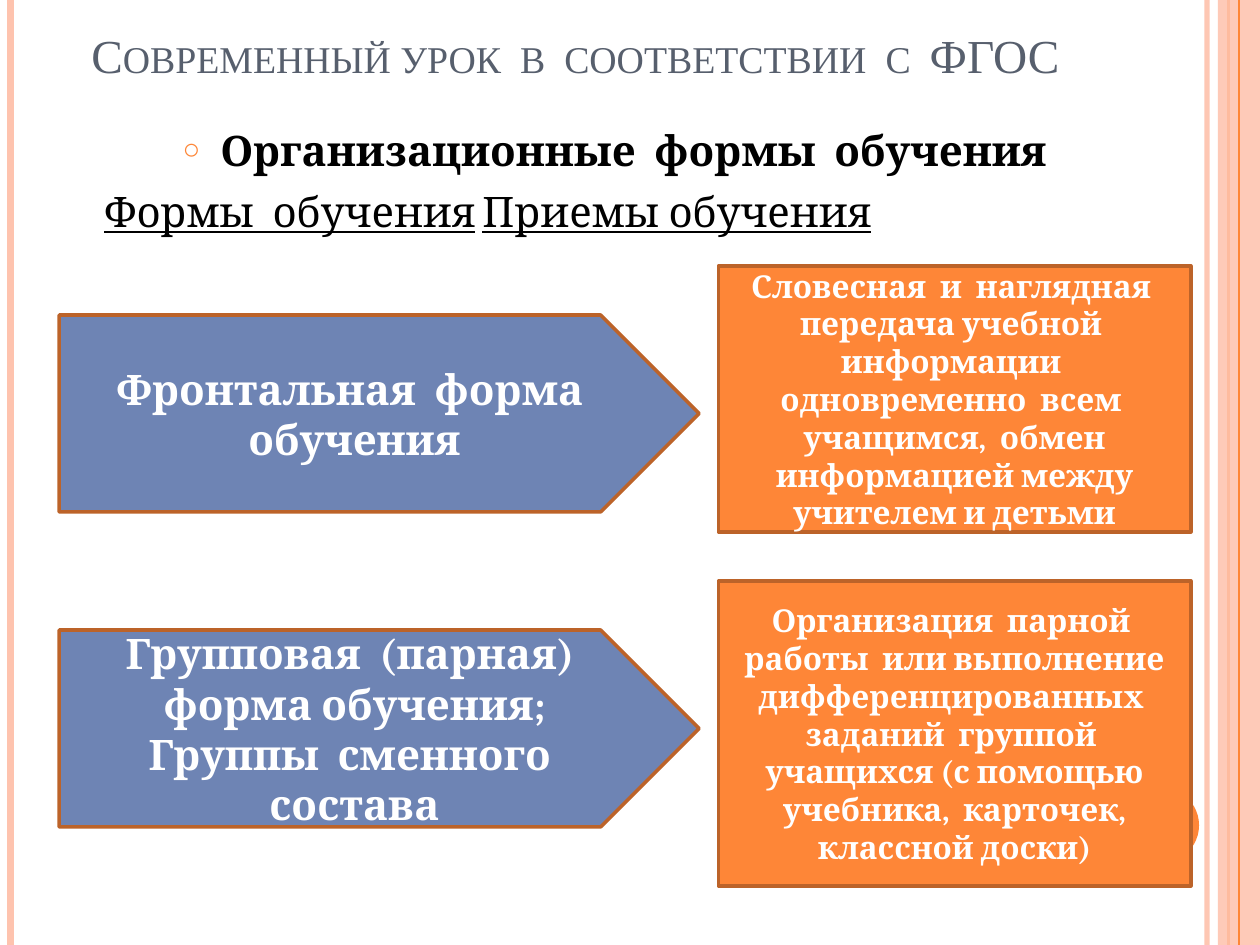
from lxml.etree import SubElement
from pptx import Presentation
from pptx.dml.color import RGBColor
from pptx.enum.shapes import MSO_CONNECTOR, MSO_SHAPE
from pptx.enum.text import MSO_ANCHOR, MSO_AUTO_SIZE, PP_ALIGN
from pptx.oxml.ns import qn
from pptx.util import Pt

WIDE, HIGH = 720, 540
ORANGE, PEACH, BLUE, RUST = "FE8637", "FEC3AE", "6E84B4", "BC6329"
HEAD = {"name": "Times New Roman", "size": Pt(27), "bold": False}
LEAD = {"name": "Cambria", "size": Pt(24), "bold": True}
PLAIN = {**LEAD, "bold": False}
UNDER = {**PLAIN, "underline": True}
SMALL = {**LEAD, "size": Pt(18)}


def hue(color, code):
    """Set a colour format from a hex string."""
    color.rgb = RGBColor.from_string(code)


def style(font, code, form):
    """Apply a dict of format values and a colour to a font."""
    for key, val in form.items():
        setattr(font, key, val)
    hue(font.color, code)


def add(parent, tag, **attrs):
    """Append a DrawingML element with attributes."""
    return SubElement(parent, qn(tag), **attrs)


def fade(part, share):
    """Make the solid fill below an element partly transparent."""
    tint = next(part.iter(qn("a:srgbClr")))
    add(tint, "a:alpha", val=str(share * 1000))


def place(shape, box):
    """Move a shape to a box in points."""
    for key, val in zip(("left", "top", "width", "height"), box):
        setattr(shape, key, Pt(val))


def write(para, text, code, form):
    """Add one formatted run to a paragraph."""
    run = para.add_run()
    run.text = text
    style(run.font, code, form)
    return run


def rule(slide, x, code, width, share=100):
    """Draw a full-height vertical line."""
    line = slide.shapes.add_connector(
        MSO_CONNECTOR.STRAIGHT, Pt(x), Pt(0), Pt(x), Pt(HIGH))
    hue(line.line.color, code)
    line.line.width = Pt(width)
    if share < 100:
        fade(line.line._ln, share)
    add(line._element.spPr, "a:effectLst")


def block(slide, kind, box, fill, edge=None):
    """Draw a filled preset shape."""
    shape = slide.shapes.add_shape(kind, *map(Pt, box))
    shape.shadow.inherit = False
    shape.fill.solid()
    hue(shape.fill.fore_color, fill)
    if edge:
        hue(shape.line.color, edge)
        shape.line.width = Pt(2)
    else:
        shape.line.fill.background()
    return shape


def frame(slide):
    """Draw the side stripes and the page disc."""
    rule(slide, 689.75, PEACH, 3, 93)
    rule(slide, 6, PEACH, 4.5)
    rule(slide, 702, ORANGE, 1.5)
    band = block(slide, MSO_SHAPE.RECTANGLE, (696, 0, 24, HIGH), PEACH)
    fade(band._element.spPr, 87)
    rule(slide, 708, ORANGE, 0.75)
    block(slide, MSO_SHAPE.OVAL, (642, 450, 43.2, 43.2), ORANGE)


def title(slide, box, text):
    """Fill the title placeholder in small capitals."""
    shape = slide.shapes.title
    place(shape, box)
    text_frame = shape.text_frame
    text_frame.auto_size = MSO_AUTO_SIZE.NONE
    text_frame.vertical_anchor = MSO_ANCHOR.BOTTOM
    para = text_frame.paragraphs[0]
    para.alignment = PP_ALIGN.LEFT
    run = write(para, text, "575F6D", HEAD)
    run.font._element.set("cap", "small")


def body(slide, box, lead, heads):
    """Fill the body placeholder with a bullet and column heads."""
    shape = slide.placeholders[1]
    place(shape, box)
    text_frame = shape.text_frame
    text_frame.auto_size = MSO_AUTO_SIZE.NONE
    first, second = text_frame.paragraphs[0], text_frame.add_paragraph()

    props = first._p.get_or_add_pPr()
    props.set("marL", str(Pt(21.6)))
    props.set("indent", str(Pt(-21.6)))
    add(add(props, "a:buClr"), "a:srgbClr", val=ORANGE)
    add(props, "a:buSzPct", val="70000")
    add(props, "a:buChar", char="○")
    first.alignment = PP_ALIGN.CENTER
    first.space_before = Pt(0)
    write(first, lead, "000000", LEAD)

    props = second._p.get_or_add_pPr()
    props.set("marL", "0")
    props.set("indent", "0")
    add(props, "a:buNone")
    stops = add(props, "a:tabLst")
    second.alignment = PP_ALIGN.LEFT
    second.space_before = Pt(6)
    for x, text in heads:
        add(stops, "a:tab", pos=str(Pt(x)), algn="l")
        write(second, "\t", "000000", PLAIN)
        write(second, text, "000000", UNDER)


def card(slide, kind, box, fill, form, lines):
    """Draw an outlined shape with centred white text."""
    text_frame = block(slide, kind, box, fill, RUST).text_frame
    text_frame.word_wrap = True
    text_frame.vertical_anchor = MSO_ANCHOR.MIDDLE
    for n, text in enumerate(lines):
        para = text_frame.add_paragraph() if n else text_frame.paragraphs[0]
        para.alignment = PP_ALIGN.CENTER
        write(para, text, "FFFFFF", form)


def pairs(slide, box, rows):
    """Stack rows of an arrow and its note."""
    left, top, width, step = box
    for n, (names, note, rise, tall) in enumerate(rows):
        y = top + n * step
        card(slide, MSO_SHAPE.PENTAGON, (left, y, 365.75, 112.5),
             BLUE, LEAD, names)
        card(slide, MSO_SHAPE.RECTANGLE,
             (left + width - 270, y - rise, 270, tall), ORANGE, SMALL, [note])


def main():
    """Build and save the slide."""
    deck = Presentation()
    deck.slide_width, deck.slide_height = Pt(WIDE), Pt(HIGH)
    slide = deck.slides.add_slide(deck.slide_layouts[1])
    frame(slide)
    title(slide, (45, 16.5, 607.5, 34.5),
          "Современный урок  в  соответствии  с  ФГОС")
    body(slide, (16.5, 67.5, 669.5, 450), "Организационные  формы  обучения",
         [(47.7, "Формы  обучения"), (396.8, "Приемы обучения")])
    pairs(slide, (33.75, 180, 646.75, 180), [
        (["Фронтальная  форма  обучения"],
         "Словесная  и  наглядная  передача учебной  информации  "
         "одновременно  всем  учащимся,  обмен информацией между "
         "учителем и детьми", 28, 152),
        (["Групповая  (парная)  форма обучения;",
          "Группы  сменного  состава"],
         "Организация  парной  работы  или выполнение "
         "дифференцированных  заданий  группой  учащихся (с помощью "
         "учебника,  карточек, классной доски)", 28, 174.25),
    ])
    deck.save("out.pptx")


if __name__ == "__main__":
    main()
